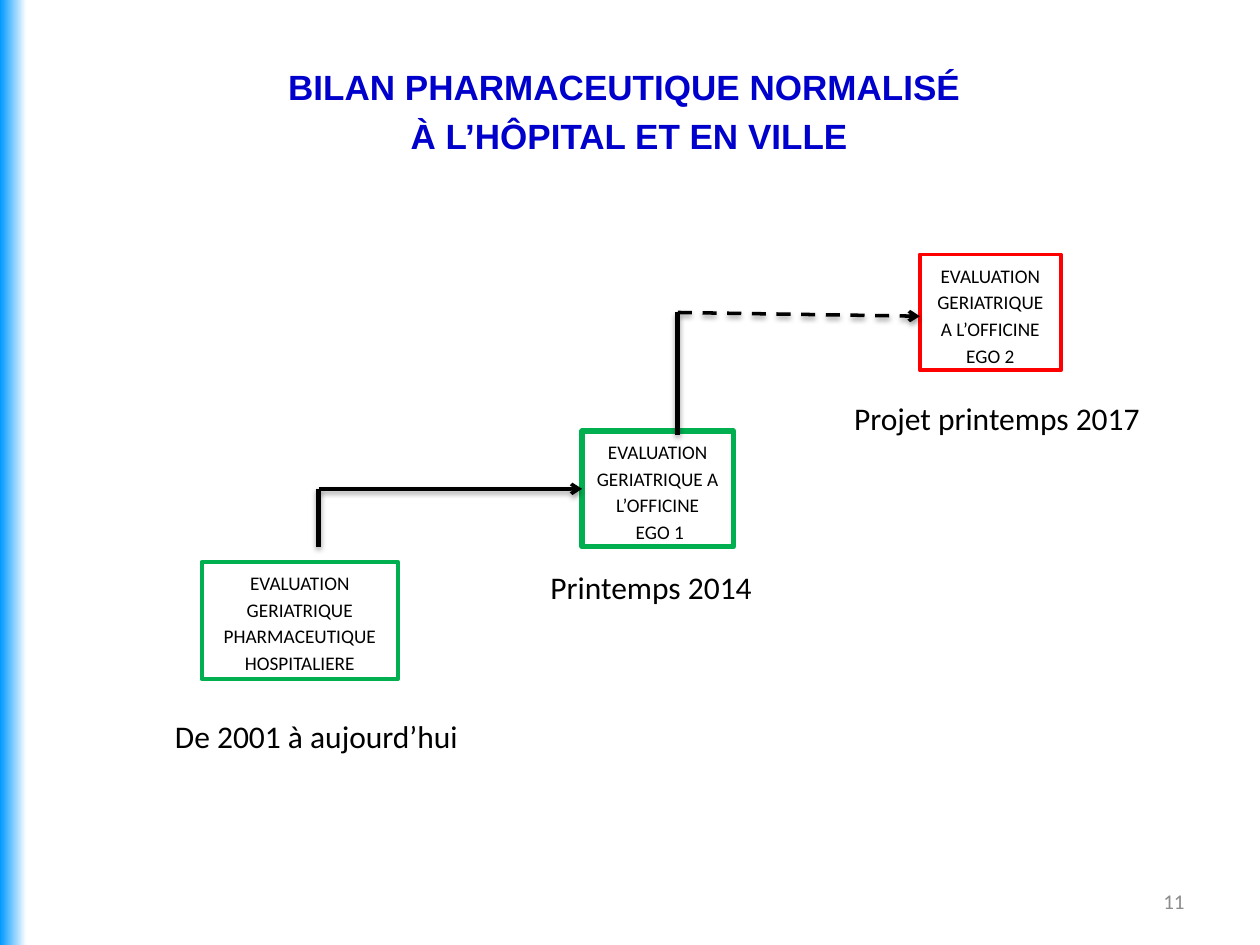
"""Build the slide on the three steps of the standard pharmaceutical review."""
from lxml import etree
from pptx import Presentation
from pptx import util as u
from pptx.dml.color import RGBColor
from pptx.enum import dml, shapes, text
from pptx.oxml import ns

TITLE = ["BILAN PHARMACEUTIQUE NORMALISÉ", " À L’HÔPITAL ET EN VILLE"]
STEPS = [
    (["EVALUATION GERIATRIQUE PHARMACEUTIQUE HOSPITALIERE"],
     (1.6, 4.46, 1.56, 0.93), "00B050", 2.25, 10),
    (["EVALUATION GERIATRIQUE A L’OFFICINE", " EGO 1"],
     (4.62, 3.42, 1.2, 0.92), "00B050", 3, 0),
    (["EVALUATION GERIATRIQUE A L’OFFICINE EGO 2"],
     (7.3, 2.02, 1.12, 0.92), "FF0000", 2.25, 10),
]
DATES = [
    ("De 2001 à aujourd’hui", (1.29, 5.64, 2.48, 0.4)),
    ("Printemps 2014", (4.27, 4.46, 1.82, 0.4)),
    ("Projet printemps 2017", (6.68, 3.12, 2.49, 0.4)),
]
ELBOWS = [
    ((2.53, 4.34), (2.53, 3.88), (4.62, 3.88), False),
    ((5.38, 3.45), (5.38, 2.48), (7.3, 2.51), True),
]


def color(value):
    return RGBColor.from_string(value)


def inches(values):
    return [u.Inches(value) for value in values]


def write(frame, lines, size, tint="000000", font="Calibri", bold=False,
          align=text.PP_ALIGN.LEFT, spacing=1.0, before=0, after=0):
    for index, line in enumerate(lines):
        para = frame.add_paragraph() if index else frame.paragraphs[0]
        para.alignment, para.line_spacing = align, spacing
        para.space_before, para.space_after = u.Pt(before), u.Pt(after)
        span = para.add_run()
        span.text = line
        span.font.name, span.font.size, span.font.bold = font, u.Pt(size), bold
        span.font.color.rgb = color(tint)


def add_label(page, place, line, size, wrap, **style):
    frame = page.shapes.add_textbox(*inches(place)).text_frame
    frame.word_wrap = wrap
    write(frame, [line], size, **style)
    return frame


def add_step(page, lines, place, edge, weight, after):
    box = page.shapes.add_shape(shapes.MSO_SHAPE.RECTANGLE, *inches(place))
    box.shadow.inherit = False
    box.fill.solid()
    box.fill.fore_color.rgb = color("FFFFFF")
    box.line.color.rgb = color(edge)
    box.line.width = u.Pt(weight)
    box.text_frame.word_wrap = True
    box.text_frame.vertical_anchor = text.MSO_ANCHOR.TOP
    write(box.text_frame, lines, 11, align=text.PP_ALIGN.CENTER,
          spacing=1.15, after=after)


def add_line(page, start, end, weight, opacity, distance, arrow=False, dashed=False):
    line = page.shapes.add_connector(
        shapes.MSO_CONNECTOR.STRAIGHT, *inches(start + end))
    line.line.color.rgb = color("000000")
    line.line.width = u.Pt(weight)
    if dashed:
        line.line.dash_style = dml.MSO_LINE.DASH
    if arrow:
        etree.SubElement(line.line._get_or_add_ln(), ns.qn("a:tailEnd"), type="arrow")
    effects = etree.SubElement(line._element.spPr, ns.qn("a:effectLst"))
    shadow = etree.SubElement(
        effects, ns.qn("a:outerShdw"), blurRad=str(u.Pt(3.1)),
        dist=str(u.Pt(distance)), dir="5400000", rotWithShape="0")
    tint = etree.SubElement(shadow, ns.qn("a:srgbClr"), val="000000")
    etree.SubElement(tint, ns.qn("a:alpha"), val=str(opacity * 1000))


def add_title(page):
    title = page.shapes.title
    title.left, title.top, title.width, title.height = inches((0.35, 0.47, 9.21, 0.84))
    frame = title.text_frame
    frame.word_wrap = True
    frame.auto_size = text.MSO_AUTO_SIZE.NONE
    frame.vertical_anchor = text.MSO_ANCHOR.TOP
    write(frame, TITLE, 20, "0000CC", "Arial", True, text.PP_ALIGN.CENTER, before=4)


def add_side_band(page):
    band = page.shapes.add_shape(
        shapes.MSO_SHAPE.RECTANGLE, *inches((0, 0, 0.21, 7.5)))
    band.shadow.inherit = False
    band.line.fill.background()
    band.fill.gradient()
    band.fill.gradient_angle = 0
    for stop, tint in zip(band.fill.gradient_stops, ("0099FF", "FFFFFF")):
        stop.color.rgb = color(tint)


def main():
    deck = Presentation()
    deck.slide_width, deck.slide_height = inches((10, 7.5))
    page = deck.slides.add_slide(deck.slide_layouts[5])
    add_title(page)
    add_side_band(page)
    for step in STEPS:
        add_step(page, *step)
    for start, corner, end, dashed in ELBOWS:
        add_line(page, corner, end, 2, 38, 1.6, arrow=True, dashed=dashed)
        add_line(page, corner, start, 3, 35, 1.8)
    for line, place in DATES:
        add_label(page, place, line, 18, False)
    number = add_label(page, (7.17, 6.95, 2.33, 0.4), "11", 12, True,
                       tint="8C8C8C", align=text.PP_ALIGN.RIGHT)
    number.vertical_anchor = text.MSO_ANCHOR.MIDDLE
    deck.save("out.pptx")


if __name__ == "__main__":
    main()
